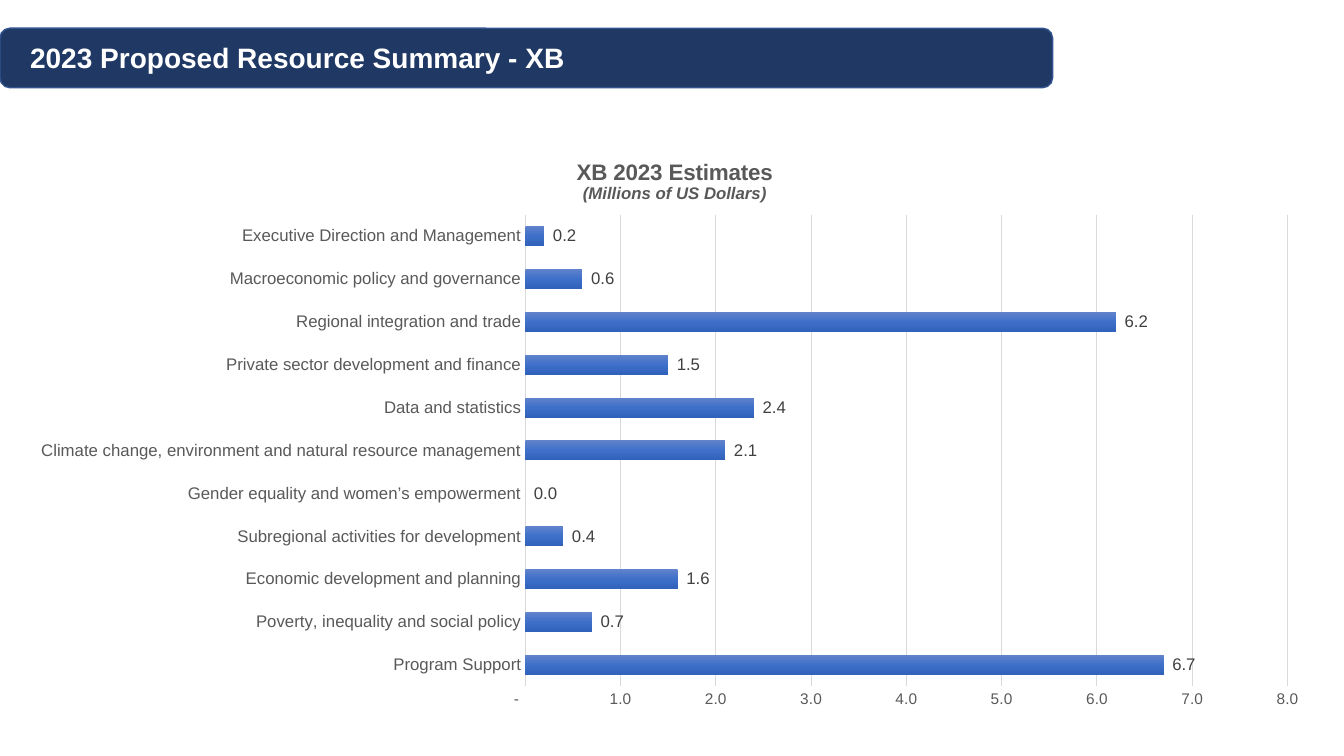
from copy import deepcopy

from pptx import Presentation
from pptx.chart.data import CategoryChartData
from pptx.dml.color import RGBColor
from pptx.enum import chart as ch, shapes, text
from pptx.oxml import parse_xml
from pptx.oxml.ns import nsdecls
from pptx.util import Inches, Pt

FONT = "Arial"
GREY, LIGHT_GREY = "595959", "D9D9D9"
LABEL_FORMAT = "_(* #,##0.0_)"
AXIS_FORMAT = '_(* #,##0.0_);_(* \\(#,##0.0\\);_(* "-"??_);_(@_)'
BAR_GRADIENT = [(0, "6183CB"), (0.5, "3E70CA"), (1, "3062BB")]
CHART_LEFT, CHART_TOP, CHART_WIDTH, CHART_HEIGHT = 0.14, 1.33, 13.04, 5.81

ESTIMATES = [
    ("Program Support", 6.7),
    ("Poverty, inequality and social policy", 0.7),
    ("Economic development and planning", 1.6),
    ("Subregional activities for development", 0.4),
    ("Gender equality and women’s empowerment", 0.0),
    ("Climate change, environment and natural resource management", 2.1),
    ("Data and statistics", 2.4),
    ("Private sector development and finance", 1.5),
    ("Regional integration and trade", 6.2),
    ("Macroeconomic policy and governance", 0.6),
    ("Executive Direction and Management", 0.2),
]


def rgb(value):
    return RGBColor.from_string(value)


def set_attributes(target, values):
    for name, value in values.items():
        setattr(target, name, value)


def style_font(font, size, color, bold=False, italic=False, name=FONT):
    set_attributes(font, {"name": name, "size": Pt(size), "bold": bold, "italic": italic})
    font.color.rgb = rgb(color)


def style_line(line, color, width):
    line.color.rgb = rgb(color)
    line.width = Pt(width)


def add_banner(slide):
    banner = slide.shapes.add_shape(
        shapes.MSO_SHAPE.ROUNDED_RECTANGLE, 0, Inches(0.28), Inches(10.44), Inches(0.59))
    banner.shadow.inherit = False
    banner.fill.solid()
    banner.fill.fore_color.rgb = rgb("203864")
    style_line(banner.line, "325491", 1)


def add_heading(slide, words):
    heading = slide.shapes.add_textbox(
        Inches(0.2), Inches(0.35), Inches(9.07), Inches(0.84)).text_frame
    set_attributes(heading, {"word_wrap": True, "vertical_anchor": text.MSO_ANCHOR.TOP})
    run = heading.paragraphs[0].add_run()
    run.text = words
    style_font(run.font, 20, "FFFFFF", bold=True)


def manual_layout(left, top, width=None, height=None):
    """Make a chart layout element from slide positions in inches."""
    values = {"x": (left - CHART_LEFT) / CHART_WIDTH, "y": (top - CHART_TOP) / CHART_HEIGHT}
    target = ""
    if width:
        values.update(w=width / CHART_WIDTH, h=height / CHART_HEIGHT)
        target = '<c:layoutTarget val="inner"/>'
    modes = '<c:xMode val="edge"/><c:yMode val="edge"/>'
    parts = "".join(f'<c:{key} val="{value:.4f}"/>' for key, value in values.items())
    return parse_xml(f'<c:layout {nsdecls("c")}><c:manualLayout>{target}{modes}{parts}'
                     "</c:manualLayout></c:layout>")


def place(element, layout, index):
    for old in element.xpath("c:layout"):
        element.remove(old)
    element.insert(index, layout)


def add_chart_title(chart):
    chart.has_title = True
    title = chart.chart_title
    title.include_in_layout = False
    frame = title.text_frame
    for number, (words, size, italic) in enumerate(
            [("XB 2023 Estimates", 16, False), ("(Millions of US Dollars)", 12, True)]):
        paragraph = frame.add_paragraph() if number else frame.paragraphs[0]
        run = paragraph.add_run()
        run.text = words
        style_font(run.font, size, GREY, bold=True, italic=italic)
    place(title._element, manual_layout(5.69, 1.54), 1)


def style_axes(chart):
    categories, values = chart.category_axis, chart.value_axis
    for axis, size in ((categories, 12), (values, 11)):
        axis.major_tick_mark = axis.minor_tick_mark = ch.XL_TICK_MARK.NONE
        style_font(axis.tick_labels.font, size, GREY)
    style_line(categories.format.line, LIGHT_GREY, 1)
    set_attributes(values, {"minimum_scale": 0, "maximum_scale": 8, "major_unit": 1,
                            "has_major_gridlines": True})
    values.format.line.fill.background()
    style_line(values.major_gridlines.format.line, LIGHT_GREY, 0.75)
    set_attributes(values.tick_labels,
                   {"number_format": AXIS_FORMAT, "number_format_is_linked": False})


def fill_gradient(fill, stops):
    fill.gradient()
    fill.gradient_angle = 270
    stop_list = fill._fill._gradFill.gsLst
    while len(stop_list) < len(stops):
        stop_list.append(deepcopy(stop_list[0]))
    for stop, (position, color) in zip(fill.gradient_stops, stops):
        stop.position = position
        stop.color.rgb = rgb(color)


def style_bars(plot):
    set_attributes(plot, {"gap_width": 115, "overlap": -20, "vary_by_categories": False,
                          "has_data_labels": True})
    series = plot.series[0]
    series.invert_if_negative = False
    fill_gradient(series.format.fill, BAR_GRADIENT)
    labels = plot.data_labels
    set_attributes(labels, {"show_value": True, "number_format": LABEL_FORMAT,
                            "number_format_is_linked": False,
                            "position": ch.XL_LABEL_POSITION.OUTSIDE_END})
    style_font(labels.font, 12, "404040")


def add_estimates_chart(slide):
    data = CategoryChartData(number_format="0.0")
    names, amounts = zip(*ESTIMATES)
    data.categories = names
    data.add_series("Series 1", amounts)
    chart = slide.shapes.add_chart(
        ch.XL_CHART_TYPE.BAR_CLUSTERED, Inches(CHART_LEFT), Inches(CHART_TOP),
        Inches(CHART_WIDTH), Inches(CHART_HEIGHT), data).chart
    chart.has_legend = False
    style_font(chart.font, 10, "000000", name="Calibri")
    add_chart_title(chart)
    style_axes(chart)
    style_bars(chart.plots[0])
    plot_area = chart._chartSpace.xpath("c:chart/c:plotArea")[0]
    place(plot_area, manual_layout(5.21, 2.13, 7.56, 4.68), 0)


def main():
    deck = Presentation()
    deck.slide_width, deck.slide_height = Inches(13.33), Inches(7.5)
    slide = deck.slides.add_slide(deck.slide_layouts[6])
    add_banner(slide)
    add_heading(slide, "2023 Proposed Resource Summary - XB")
    add_estimates_chart(slide)
    deck.save("out.pptx")


if __name__ == "__main__":
    main()
